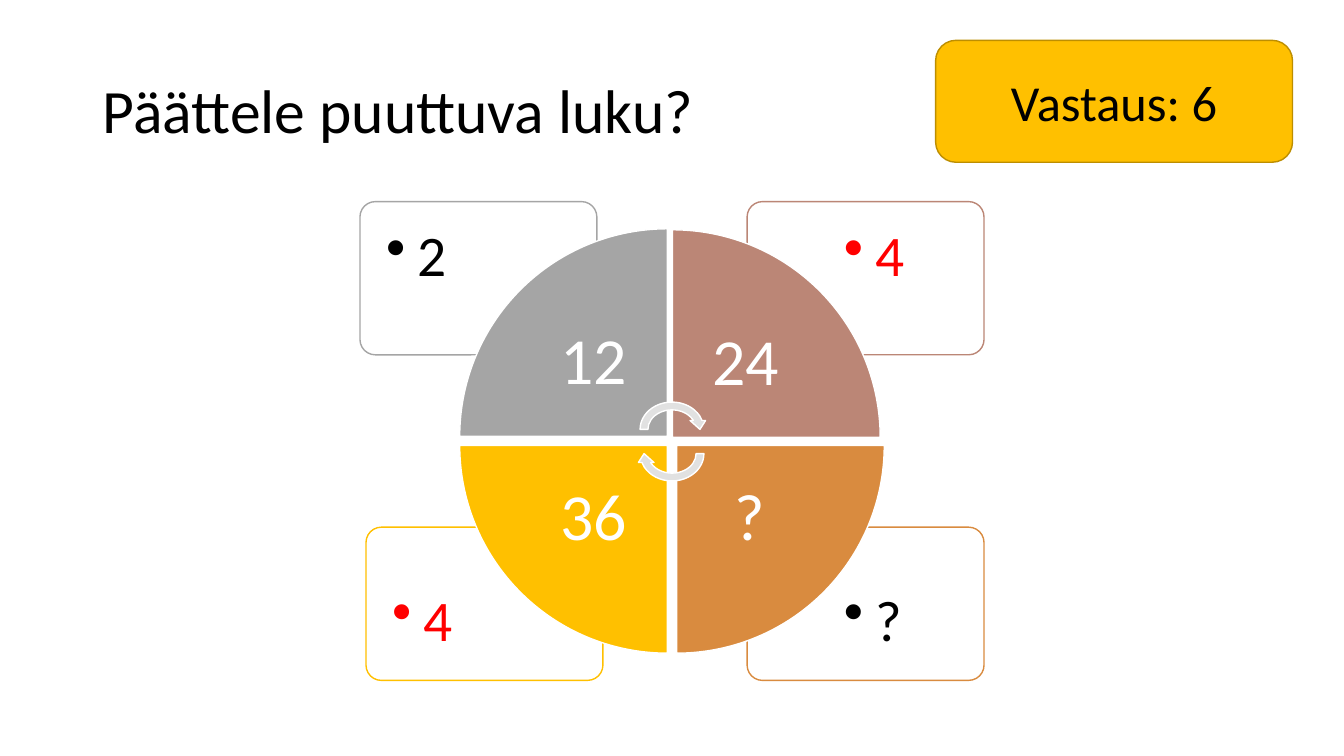
import pptx
import pptx.util
import pptx.dml.color
import pptx.enum.shapes
import pptx.enum.text
import pptx.oxml.ns
import lxml.etree

Inches = pptx.util.Inches
Pt = pptx.util.Pt
RGBColor = pptx.dml.color.RGBColor
Shape = pptx.enum.shapes.MSO_SHAPE
Align = pptx.enum.text.PP_ALIGN
Anchor = pptx.enum.text.MSO_ANCHOR
qn = pptx.oxml.ns.qn

BLACK = RGBColor(0x00, 0x00, 0x00)
WHITE = RGBColor(0xFF, 0xFF, 0xFF)
RED = RGBColor(0xFF, 0x00, 0x00)
GREY = RGBColor(0xA5, 0xA5, 0xA5)
ROSE = RGBColor(0xBB, 0x86, 0x76)
ORANGE = RGBColor(0xD9, 0x8B, 0x3F)
GOLD = RGBColor(0xFF, 0xC0, 0x00)
DARK_GOLD = RGBColor(0xBD, 0x8E, 0x00)
LIGHT_GREY = RGBColor(0xE1, 0xE1, 0xE1)


def write(box, text, size, color=BLACK, align=Align.CENTER, anchor=Anchor.MIDDLE,
          inset=None, spacing=0.9, bullet=False):
    frame = box.text_frame
    frame.word_wrap = True
    frame.vertical_anchor = anchor
    if inset is not None:
        frame.margin_left = frame.margin_right = Inches(inset)
        frame.margin_top = frame.margin_bottom = Inches(inset)
    para = frame.paragraphs[0]
    para.alignment = align
    para.line_spacing = spacing
    span = para.add_run()
    span.text = text
    span.font.name = "Calibri"
    span.font.size = Pt(size)
    span.font.color.rgb = color
    if bullet:
        props = para._p.get_or_add_pPr()
        props.set("marL", str(Inches(0.31)))
        props.set("indent", str(-Inches(0.31)))
        lxml.etree.SubElement(props, qn("a:buChar")).set("char", "•")


def add_figure(kind, left, top, width, height, fill, line, rotation=0):
    shape = page.shapes.add_shape(kind, Inches(left), Inches(top), Inches(width), Inches(height))
    shape.shadow.inherit = False
    shape.fill.solid()
    shape.fill.fore_color.rgb = fill
    shape.line.color.rgb = line
    shape.line.width = Pt(1)
    shape.rotation = rotation
    return shape


deck = pptx.Presentation()
deck.slide_width = Inches(13.33)
deck.slide_height = Inches(7.5)
page = deck.slides.add_slide(deck.slide_layouts[5])

title = page.shapes.title
title.left, title.top = Inches(0.92), Inches(0.4)
title.width, title.height = Inches(11.5), Inches(1.45)
write(title, "Päättele puuttuva luku?", 44, align=Align.LEFT)

cards = [
    (7.41, 5.23, 0.74, 0.42, "?", BLACK, ORANGE),
    (3.63, 5.23, 0.04, 0.42, "4", RED, GOLD),
    (7.41, 2.0, 0.74, 0.03, "4", RED, ROSE),
    (3.57, 2.0, 0.04, 0.03, "2", BLACK, GREY),
]
for left, top, shift_x, shift_y, text, color, line in cards:
    card = add_figure(Shape.ROUNDED_RECTANGLE, left, top, 2.35, 1.52, WHITE, line)
    card.adjustments[0] = 0.1
    label = page.shapes.add_textbox(Inches(left + shift_x), Inches(top + shift_y),
                                    Inches(1.58), Inches(1.08))
    write(label, text, 41, color, Align.LEFT, Anchor.TOP, inset=0.22, bullet=True)

wedges = [
    (4.56, 2.27, 0.6, 0.6, "12", GREY),
    (6.67, 2.28, 0, 0.6, "24", ROSE),
    (6.71, 4.42, 0, 0, "?", ORANGE),
    (4.56, 4.42, 0.6, 0, "36", GOLD),
]
for turn, (left, top, shift_x, shift_y, text, fill) in enumerate(wedges):
    add_figure(Shape.PIE_WEDGE, left, top, 2.06, 2.06, fill, WHITE, turn * 90)
    label = page.shapes.add_textbox(Inches(left + shift_x), Inches(top + shift_y),
                                    Inches(1.46), Inches(1.46))
    write(label, text, 47, WHITE, inset=0.37)

for top, rotation in [(3.95, 0), (4.19, 180)]:
    add_figure(Shape.CIRCULAR_ARROW, 6.31, top, 0.71, 0.62, LIGHT_GREY, WHITE, rotation)

answer = add_figure(Shape.ROUNDED_RECTANGLE, 9.28, 0.4, 3.54, 1.21, GOLD, DARK_GOLD)
write(answer, "Vastaus: 6", 36, spacing=1.0)

deck.save("out.pptx")
